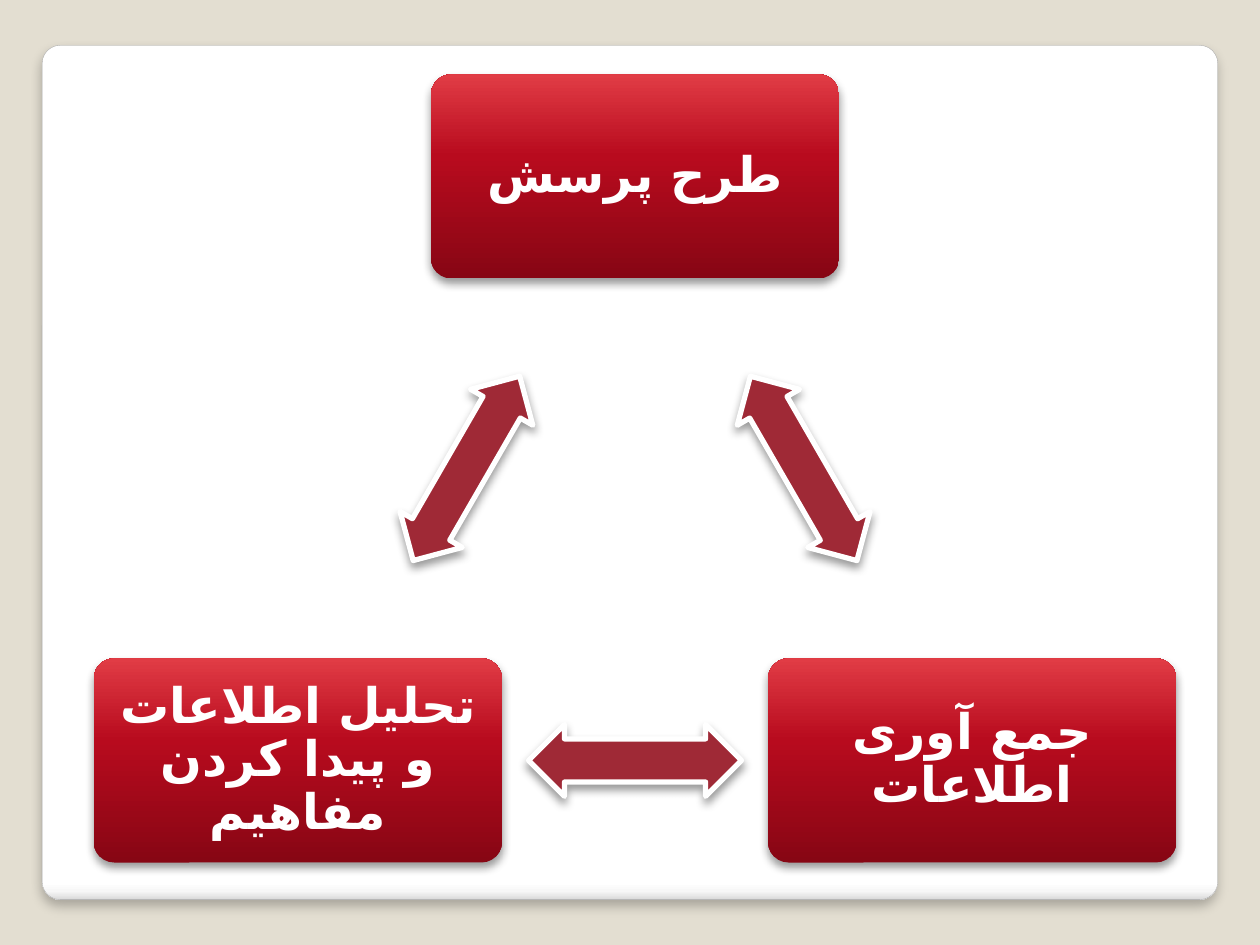
from dataclasses import dataclass
from math import cos, radians, sin

from lxml.etree import SubElement as Sub
from pptx import Presentation
from pptx.dml.color import RGBColor as Rgb
from pptx.enum.shapes import MSO_SHAPE as Kind
from pptx.enum.text import MSO_ANCHOR as Anchor, PP_ALIGN as Align
from pptx.oxml.ns import qn
from pptx.util import Inches, Pt

COLORS = {
    "page": "E3DED1", "edge": "A4A4A4", "white": "FFFFFF", "mist": "F7F7F7",
    "gray": "DADADA", "dark": "870614", "red": "B80B1E", "light": "E13C45",
    "arrow": "9F2936", "black": "000000",
}
FONT = "DejaVu Sans"
MID_X, MID_Y, RADIUS = 5.04, 4.49, 3.09
CARD_W, CARD_H = 3.24, 1.62
ARROW_W, ARROW_H = 1.69, 0.57


@dataclass
class Shade:
    alpha: int
    blur: float
    dist: float


@dataclass
class Step:
    text: str
    turn: int


SOFT = Shade(25, 6, 4)
DEEP = Shade(40, 5.2, 3)
PANEL = [(0, "white"), (98, "white"), (99, "mist"), (100, "gray")]
GLOSS = [(0, "dark"), (60, "red"), (100, "light")]
STEPS = [
    Step("طرح پرسش", 0),
    Step("جمع آوری اطلاعات", 120),
    Step("تحلیل اطلاعات و پیدا کردن مفاهیم", 240),
]


def color(name: str) -> Rgb:
    return Rgb.from_string(COLORS[name])


def place(turn: float, reach: float) -> tuple[float, float]:
    angle = radians(turn)
    return MID_X + reach * sin(angle), MID_Y - reach * cos(angle)


def add_shape(slide, kind, x: float, y: float, w: float, h: float,
              adjust: list[float], shade: Shade):
    shape = slide.shapes.add_shape(
        kind, Inches(x - w / 2), Inches(y - h / 2), Inches(w), Inches(h))
    for i, value in enumerate(adjust):
        shape.adjustments[i] = value
    shape.shadow.inherit = False
    effects = shape._element.spPr.find(qn("a:effectLst"))
    outer = Sub(effects, qn("a:outerShdw"), blurRad=str(Pt(shade.blur)),
                dist=str(Pt(shade.dist)), dir="5400000", rotWithShape="0")
    tint = Sub(outer, qn("a:srgbClr"), val=COLORS["black"])
    Sub(tint, qn("a:alpha"), val=str(shade.alpha * 1000))
    return shape


def set_blend(shape, stops: list[tuple[int, str]], angle: int) -> None:
    shape.fill.gradient()
    shape.fill.gradient_angle = angle
    group = shape._element.spPr.find(qn("a:gradFill")).find(qn("a:gsLst"))
    for old in list(group):
        group.remove(old)
    for spot, name in stops:
        stop = Sub(group, qn("a:gs"), pos=str(spot * 1000))
        Sub(stop, qn("a:srgbClr"), val=COLORS[name])


def set_line(shape, name: str, width: float) -> None:
    shape.line.color.rgb = color(name)
    shape.line.width = Pt(width)


def add_panel(slide) -> None:
    panel = add_shape(slide, Kind.ROUNDED_RECTANGLE, 5, 3.75, 9.33, 6.78,
                      [0.021], SOFT)
    set_blend(panel, PANEL, 270)
    set_line(panel, "edge", 0.16)


def add_card(slide, step: Step) -> None:
    x, y = place(step.turn, RADIUS)
    card = add_shape(slide, Kind.ROUNDED_RECTANGLE, x, y, CARD_W, CARD_H,
                     [0.1], DEEP)
    set_blend(card, GLOSS, 90)
    card.line.fill.background()
    frame = card.text_frame
    frame.word_wrap = True
    frame.vertical_anchor = Anchor.MIDDLE
    frame.margin_left = frame.margin_right = Inches(0.07)
    frame.margin_top = frame.margin_bottom = Inches(0.07)
    para = frame.paragraphs[0]
    para.text = step.text
    para.alignment = Align.CENTER
    para.line_spacing = 0.9
    font = para.font
    font.name, font.size, font.bold = FONT, Pt(28), True
    font.color.rgb = color("white")
    props = para._p.pPr
    props.set("rtl", "1")
    Sub(props.find(qn("a:defRPr")), qn("a:cs"), typeface=FONT)


def add_arrow(slide, turn: int) -> None:
    x, y = place(turn, RADIUS / 2)
    arrow = add_shape(slide, Kind.LEFT_RIGHT_ARROW, x, y, ARROW_W, ARROW_H,
                      [0.6, 0.5], DEEP)
    arrow.rotation = turn
    arrow.fill.solid()
    arrow.fill.fore_color.rgb = color("arrow")
    set_line(arrow, "white", 3)


def main() -> None:
    deck = Presentation()
    deck.slide_width, deck.slide_height = Inches(10), Inches(7.5)
    slide = deck.slides.add_slide(deck.slide_layouts[6])
    back = slide.background.fill
    back.solid()
    back.fore_color.rgb = color("page")
    add_panel(slide)
    for step in STEPS:
        add_card(slide, step)
        add_arrow(slide, step.turn + 60)
    deck.save("out.pptx")


if __name__ == "__main__":
    main()
